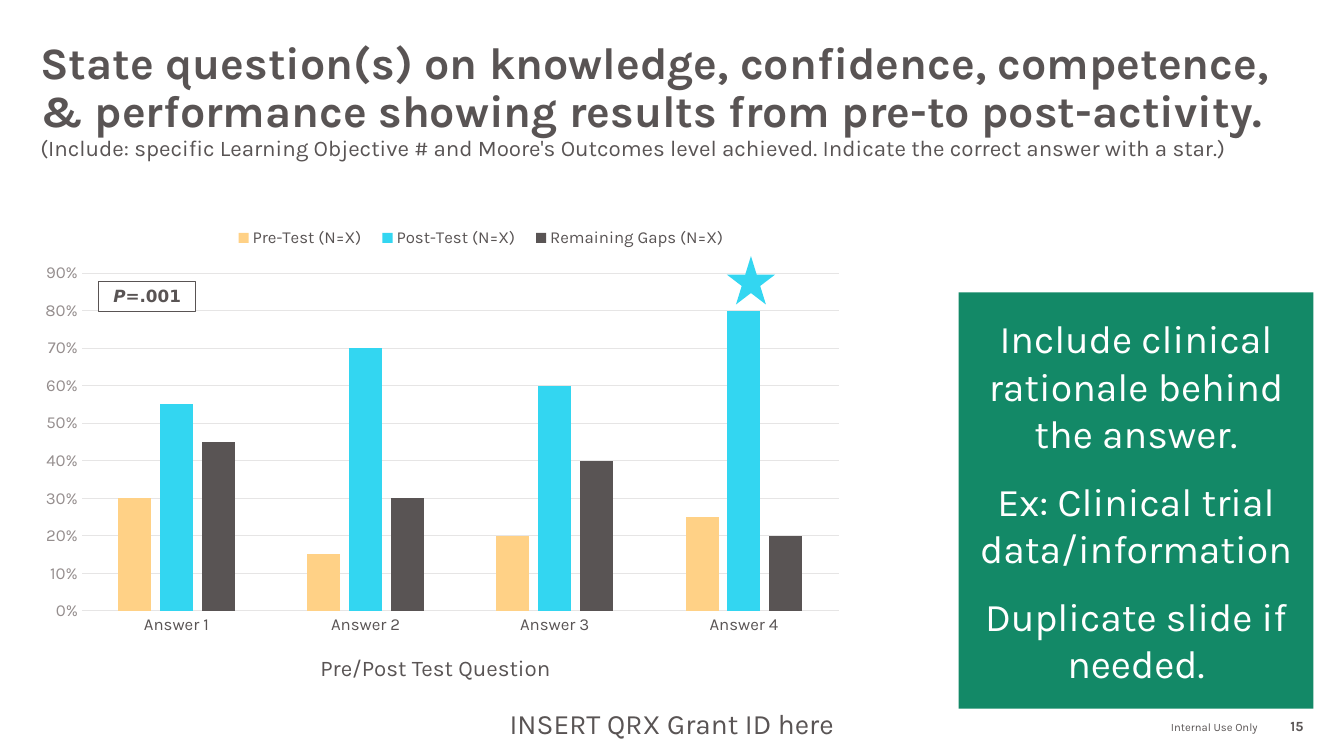
"""Build the pre/post activity results slide with its chart and rationale panel."""
from dataclasses import dataclass
from typing import Optional

from lxml import etree
from pptx import Presentation
from pptx import util as u
from pptx.chart.data import CategoryChartData
from pptx.dml.color import RGBColor
from pptx.enum import chart as charts, shapes, text
from pptx.oxml.ns import qn

INK, GREY, RULE, WHITE = "595454", "958E8E", "E6E5E5", "FFFFFF"
SAND, CYAN, GREEN = "FFD186", "33D6F1", "138967"
KARLA, DEJAVU = "Karla", "DejaVu Sans"
LEFT, CENTER, RIGHT = text.PP_ALIGN.LEFT, text.PP_ALIGN.CENTER, text.PP_ALIGN.RIGHT
TOP, MIDDLE, BOTTOM = text.MSO_ANCHOR.TOP, text.MSO_ANCHOR.MIDDLE, text.MSO_ANCHOR.BOTTOM


@dataclass
class Span:
    words: str
    size: Optional[float] = None
    bold: Optional[bool] = None
    italic: Optional[bool] = None


@dataclass
class Block:
    area: tuple
    paragraphs: list
    size: float
    color: str = INK
    face: str = KARLA
    bold: bool = False
    align: text.PP_ALIGN = CENTER
    anchor: text.MSO_ANCHOR = TOP
    margins: tuple = (0, 0)
    gap: float = 0
    line_spacing: Optional[float] = None
    fill: Optional[str] = None
    line: Optional[str] = None


@dataclass
class Series:
    name: str
    values: tuple
    color: str


TITLE = Block((28.8, 28.8, 902.2, 127.4), [[
    Span("State question(s) on knowledge, confidence, competence, & performance "
         "showing results from pre-to post-activity. ", 32, True),
    Span("(Include: specific Learning Objective # and Moore's Outcomes level achieved. "
         "Indicate the correct answer with a star.)", 16, False)]],
    32, align=LEFT, line_spacing=0.9)
BLOCKS = [
    Block((645.8, 506.2, 252.7, 18), [[Span("Internal Use Only")]], 8, align=RIGHT, anchor=BOTTOM),
    Block((905.8, 506.2, 25.2, 18), [[Span("15")]], 10, bold=True, align=RIGHT, anchor=BOTTOM),
    Block((70.6, 200.9, 69.1, 21.6), [[Span("P", italic=True), Span("=.001")]], 12, face=DEJAVU,
          bold=True, margins=(7.2, 3.6), fill=WHITE, line=INK),
    Block((58.3, 467.3, 505.4, 23.8), [[Span("Pre/Post Test Question")]], 16),
    Block((684.7, 208.8, 253.4, 297.4), [
        [Span("Include clinical rationale behind the answer.")],
        [Span("Ex: Clinical trial data/information")],
        [Span("Duplicate slide if needed.")]],
        28, color=WHITE, anchor=MIDDLE, gap=15, fill=GREEN),
    Block((290.2, 501.1, 379.4, 28.8), [[Span("INSERT QRX Grant ID here")]], 20, margins=(7.2, 3.6)),
]
CHART_AREA = (28.8, 137.5, 594, 360)
STAR_AREA = (519.1, 182.9, 34.6, 34.6)
SERIES = [
    Series("Pre-Test (N=X)", (0.3, 0.15, 0.2, 0.25), SAND),
    Series("Post-Test (N=X)", (0.55, 0.7, 0.6, 0.8), CYAN),
    Series("Remaining Gaps (N=X)", (0.45, 0.3, 0.4, 0.2), INK),
]


def points(area: tuple) -> list:
    return [u.Pt(length) for length in area]


def rgb(value: str) -> RGBColor:
    return RGBColor.from_string(value)


def paint(target, color: str) -> None:
    target.fill.solid()
    target.fill.fore_color.rgb = rgb(color)


def set_font(font, size: float, color: str = INK, face: str = KARLA) -> None:
    font.name, font.size = face, u.Pt(size)
    font.color.rgb = rgb(color)


def write(box, block: Block) -> None:
    frame = box.text_frame
    frame.word_wrap, frame.auto_size = True, text.MSO_AUTO_SIZE.NONE
    frame.vertical_anchor = block.anchor
    frame.margin_left = frame.margin_right = u.Pt(block.margins[0])
    frame.margin_top = frame.margin_bottom = u.Pt(block.margins[1])
    for index, spans in enumerate(block.paragraphs):
        para = frame.add_paragraph() if index else frame.paragraphs[0]
        para.alignment = block.align
        para.space_before = u.Pt(block.gap if index else 0)
        if block.line_spacing:
            para.line_spacing = block.line_spacing
        set_font(para.font, block.size, block.color, block.face)
        para.font.bold = block.bold
        for span in spans:
            run = para.add_run()
            run.text = span.words
            run.font.bold, run.font.italic = span.bold, span.italic
            if span.size:
                run.font.size = u.Pt(span.size)


def add_shape(page, kind: shapes.MSO_SHAPE, area: tuple, fill: str, line: Optional[str] = None):
    shape = page.shapes.add_shape(kind, *points(area))
    shape.shadow.inherit = False
    paint(shape, fill)
    if line:
        shape.line.color.rgb = rgb(line)
        shape.line.width = u.Pt(0.75)
    else:
        shape.line.fill.background()
    return shape


def add_block(page, block: Block) -> None:
    if block.fill:
        box = add_shape(page, shapes.MSO_SHAPE.RECTANGLE, block.area, block.fill, block.line)
    else:
        box = page.shapes.add_textbox(*points(block.area))
    write(box, block)


def set_layout(parent, position: int, fractions: tuple, inner: bool = False) -> None:
    for old in parent.findall(qn("c:layout")):
        parent.remove(old)
    layout = etree.Element(qn("c:layout"))
    manual = etree.SubElement(layout, qn("c:manualLayout"))
    settings = [("layoutTarget", "inner")] if inner else []
    settings += [("xMode", "edge"), ("yMode", "edge"), *zip("xywh", fractions)]
    for tag, value in settings:
        etree.SubElement(manual, qn(f"c:{tag}")).set("val", str(value))
    parent.insert(position, layout)


def add_results_chart(page) -> None:
    data = CategoryChartData(number_format="0%")
    data.categories = [f"Answer {number}" for number in range(1, 5)]
    for series in SERIES:
        data.add_series(series.name, series.values)
    chart = page.shapes.add_chart(
        charts.XL_CHART_TYPE.COLUMN_CLUSTERED, *points(CHART_AREA), data).chart
    set_font(chart.font, 10)
    chart.has_title = False
    plot = chart.plots[0]
    plot.vary_by_categories, plot.gap_width, plot.overlap = False, 219, -27
    for drawn, series in zip(plot.series, SERIES):
        paint(drawn.format, series.color)
    for axis, color in ((chart.category_axis, INK), (chart.value_axis, GREY)):
        axis.major_tick_mark = axis.minor_tick_mark = charts.XL_TICK_MARK.NONE
        set_font(axis.tick_labels.font, 12, color)
    values = chart.value_axis
    values.minimum_scale, values.maximum_scale, values.major_unit = 0, 0.9, 0.1
    values.tick_labels.number_format = "0%"
    values.tick_labels.number_format_is_linked = False
    values.format.line.fill.background()
    for line in (chart.category_axis.format.line, values.major_gridlines.format.line):
        line.color.rgb = rgb(RULE)
        line.width = u.Pt(0.75)
    chart.has_legend = True
    chart.legend.position = charts.XL_LEGEND_POSITION.BOTTOM
    chart.legend.include_in_layout = False
    set_font(chart.legend.font, 12)
    tree = chart.element
    set_layout(tree.find(".//" + qn("c:plotArea")), 0, (0.05, 0.16, 0.91, 0.67), inner=True)
    set_layout(tree.find(".//" + qn("c:legend")), 1, (0.22, 0.06, 0.62, 0.06))


def main() -> None:
    deck = Presentation()
    deck.slide_width, deck.slide_height = points((960, 540))
    page = deck.slides.add_slide(deck.slide_layouts[5])
    title = page.shapes.title
    title.left, title.top, title.width, title.height = points(TITLE.area)
    write(title, TITLE)
    add_results_chart(page)
    add_shape(page, shapes.MSO_SHAPE.STAR_5_POINT, STAR_AREA, CYAN)
    for block in BLOCKS:
        add_block(page, block)
    deck.save("out.pptx")


if __name__ == "__main__":
    main()
